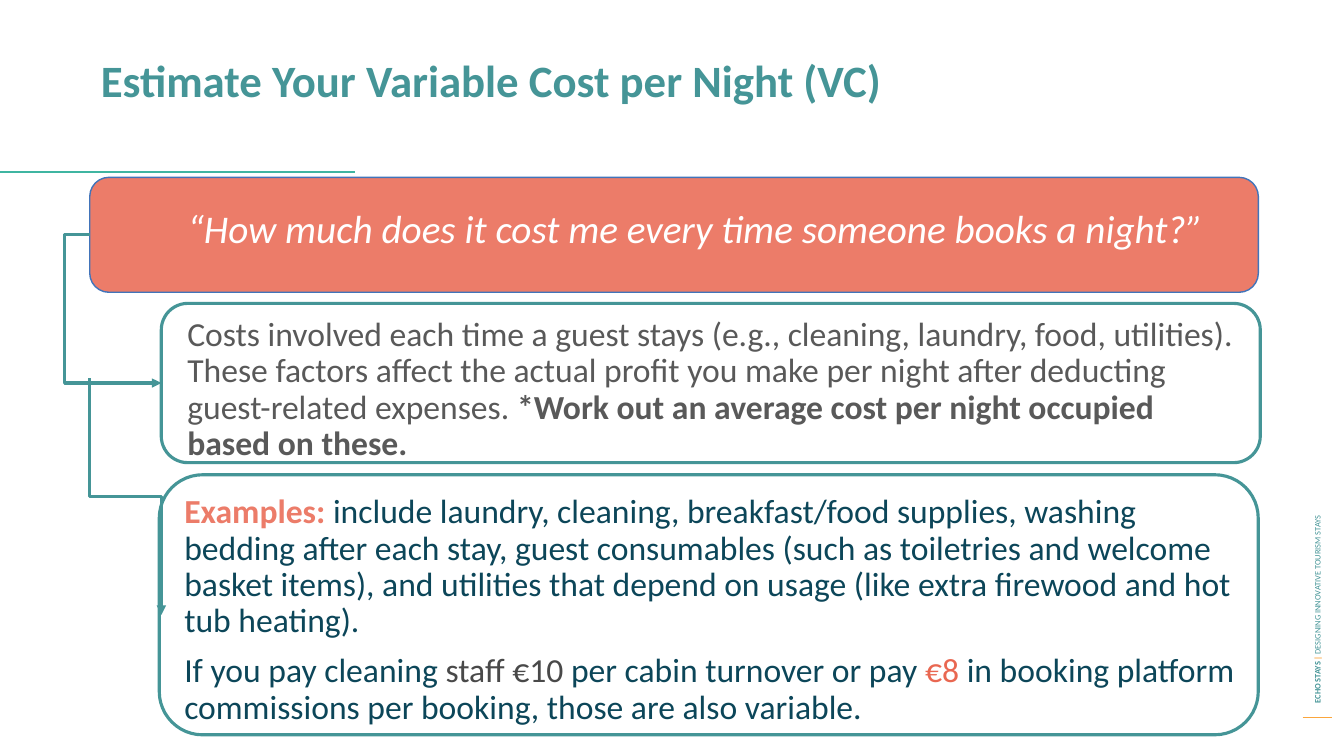
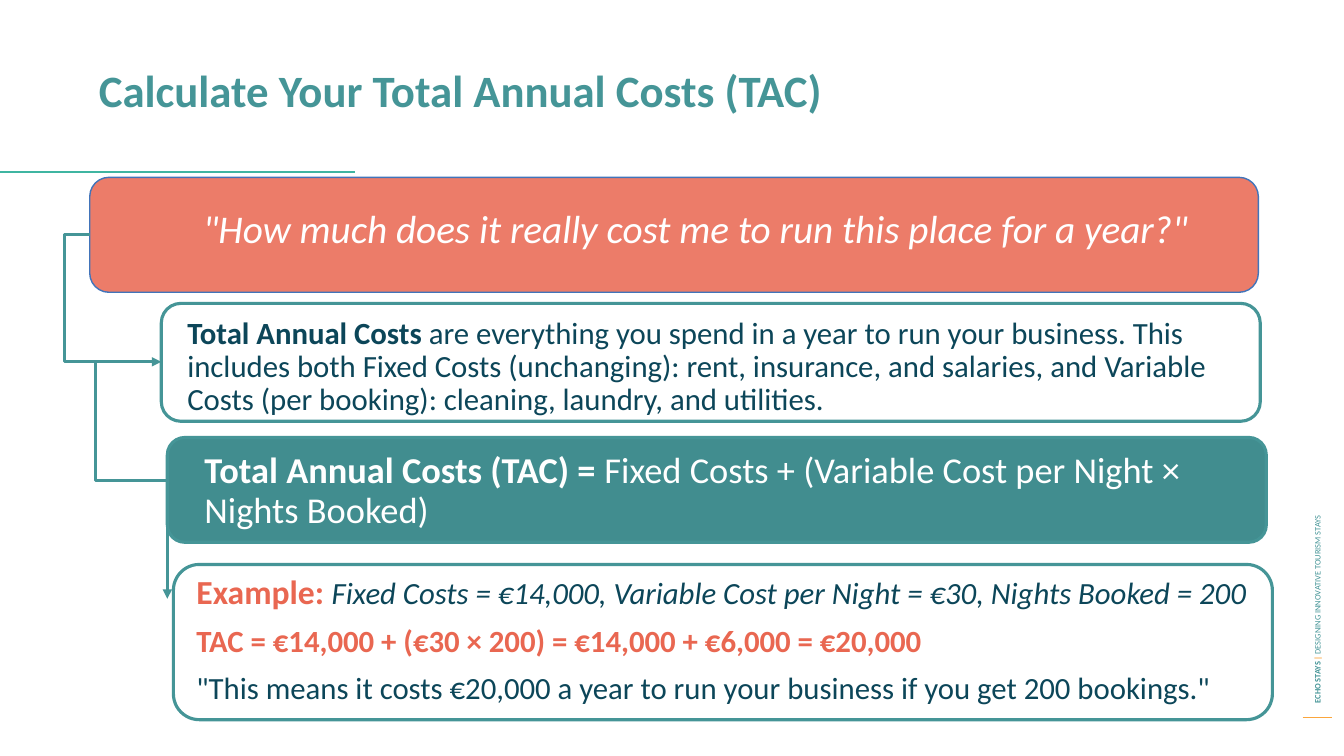
import dataclasses

import lxml.etree
import pptx
import pptx.dml.color
import pptx.enum.shapes
import pptx.enum.text
import pptx.oxml.ns
import pptx.util

Inches = pptx.util.Inches
Pt = pptx.util.Pt
SHAPES = pptx.enum.shapes.MSO_SHAPE
CONNECTORS = pptx.enum.shapes.MSO_CONNECTOR
ALIGN = pptx.enum.text.PP_ALIGN
ANCHOR = pptx.enum.text.MSO_ANCHOR
qn = pptx.oxml.ns.qn


# Shared colours, type sizes and measures
@dataclasses.dataclass(frozen=True)
class Theme:
    font: str = "Calibri"
    teal: str = "459597"
    deep_teal: str = "418D8F"
    rule_green: str = "3FB5A1"
    coral: str = "EC7C69"
    red: str = "E96751"
    amber: str = "FBA63D"
    blue: str = "4174BA"
    navy: str = "0C4659"
    grey: str = "595959"
    dark_grey: str = "494949"
    white: str = "FFFFFF"
    title_size: int = 32
    quote_size: int = 28
    formula_size: int = 26
    body_size: int = 24
    small_body_size: int = 22
    footer_size: int = 6
    card_line: float = 2.25
    card_width: float = 10.9
    text_width: float = 10.63
    text_height: float = 0.88
    wide_text: float = 11.61


THEME = Theme()


def rgb(colour):
    return pptx.dml.color.RGBColor.from_string(colour)


# Text
def format_span(span, formats):
    values = {"name": THEME.font, "bold": False, "italic": False, **formats}
    span.font.color.rgb = rgb(values.pop("colour"))
    values["size"] = Pt(values["size"])
    for name, value in values.items():
        setattr(span.font, name, value)


def write_paras(frame, paras, **para_formats):
    """Fill a frame; each paragraph is a list of (text, formats) spans."""
    for number, spans in enumerate(paras):
        para = frame.add_paragraph() if number else frame.paragraphs[0]
        values = {"line_spacing": 0.9, "space_before": Pt(10 if number else 0),
                  "alignment": ALIGN.LEFT, **para_formats}
        for name, value in values.items():
            setattr(para, name, value)
        for text, formats in spans:
            span = para.add_run()
            span.text = text
            format_span(span, formats)


def add_text(page, left, top, paras, width=THEME.text_width,
             height=THEME.text_height, **para_formats):
    box = page.shapes.add_textbox(*map(Inches, (left, top, width, height)))
    box.text_frame.word_wrap = True
    write_paras(box.text_frame, paras, **para_formats)
    return box


def add_title(page, left, top, text):
    title = page.shapes.title
    places = {"left": left, "top": top, "width": THEME.wide_text,
              "height": THEME.text_height}
    for name, value in places.items():
        setattr(title, name, Inches(value))
    frame_formats = {"vertical_anchor": ANCHOR.TOP, "word_wrap": True,
                     "auto_size": pptx.enum.text.MSO_AUTO_SIZE.NONE}
    for name, value in frame_formats.items():
        setattr(title.text_frame, name, value)
    style = {"size": THEME.title_size, "colour": THEME.teal, "bold": True}
    write_paras(title.text_frame, [[(text, style)]])


# Cards and lines
def add_card(page, left, top, height, width=THEME.card_width, fill=None,
             line=THEME.teal, weight=THEME.card_line):
    card = page.shapes.add_shape(SHAPES.FLOWCHART_ALTERNATE_PROCESS,
                                 *map(Inches, (left, top, width, height)))
    card.shadow.inherit = False
    if fill:
        card.fill.solid()
        card.fill.fore_color.rgb = rgb(fill)
    else:
        card.fill.background()
    card.line.color.rgb = rgb(line)
    card.line.width = Pt(weight)


def add_line(page, start, end, colour, weight, kind=CONNECTORS.STRAIGHT):
    line = page.shapes.add_connector(kind, *map(Inches, (*start, *end)))
    line.line.color.rgb = rgb(colour)
    line.line.width = Pt(weight)
    lxml.etree.SubElement(line._element.spPr, qn("a:effectLst"))
    return line


def add_elbow(page, start, end, bend):
    """Draw a bent arrow; bend is the share of its length before the turn."""
    arrow = add_line(page, start, end, THEME.teal, THEME.card_line,
                     CONNECTORS.ELBOW)
    properties = arrow._element.spPr
    lxml.etree.SubElement(properties.find(qn("a:ln")), qn("a:tailEnd"),
                          type="triangle")
    lxml.etree.SubElement(properties.find(".//" + qn("a:avLst")), qn("a:gd"),
                          name="adj1", fmla=f"val {round(bend * 100000)}")
    return arrow


def add_side_elbow(page, start, end):
    """Leave to the left, go down, then point right."""
    add_elbow(page, start, end, -0.25 / (end[0] - start[0]))


def add_step_elbow(page, start, end):
    """Go down, across and down: a mirrored elbow turned by a quarter."""
    middle_x, middle_y = (start[0] + end[0]) / 2, (start[1] + end[1]) / 2
    half_drop, half_run = (end[1] - start[1]) / 2, (end[0] - start[0]) / 2
    arrow = add_elbow(page, (middle_x + half_drop, middle_y - half_run),
                      (middle_x - half_drop, middle_y + half_run), 0.5)
    arrow._element.spPr.find(qn("a:xfrm")).set("rot", str(270 * 60000))


# Parts that every slide shares
def add_footer(page):
    add_line(page, (12.92, 7.12), (13.21, 7.12), THEME.amber, 0.75)
    style = {"size": THEME.footer_size, "colour": THEME.teal}
    box = add_text(page, 10.18, 4.09, [[
        ("ECHO STAYS ", {**style, "bold": True}),
        ("| ", {**style, "colour": THEME.amber, "bold": True}),
        ("DESIGNING INNOVATIVE TOURISM STAYS", style),
    ]], 5.77, 0.2, line_spacing=1.0)
    box.text_frame.vertical_anchor = ANCHOR.MIDDLE
    box.rotation = 270


def add_quote(page, quote):
    add_card(page, 0.89, 1.76, 1.14, 11.59, THEME.coral, THEME.blue, 1)
    add_line(page, (0, 1.71), (3.52, 1.71), THEME.rule_green, 1.5)
    style = {"size": THEME.quote_size, "colour": THEME.white, "italic": True}
    add_text(page, 1.09, 2.03, [[(quote, style)]], THEME.wide_text,
             alignment=ALIGN.CENTER)


def add_page(deck, title, title_left, title_top, quote):
    page = deck.slides.add_slide(deck.slide_layouts.get_by_name("Title Only"))
    add_footer(page)
    add_title(page, title_left, title_top, title)
    add_quote(page, quote)
    return page


# Slides
def build_variable_cost(deck):
    page = add_page(
        deck, "Estimate Your Variable Cost per Night (VC)", 0.9, 0.53,
        "“How much does it cost me every time someone books a night?”")
    grey = {"size": THEME.body_size, "colour": THEME.grey}
    navy = {**grey, "colour": THEME.navy}

    add_text(page, 1.76, 3.1, [[
        ("Costs involved each time a guest stays (e.g., cleaning, laundry, "
         "food, utilities). These factors affect the actual profit you make "
         "per night after deducting guest-related expenses. ", grey),
        ("*Work out an average cost per night occupied based on these.",
         {**grey, "bold": True}),
    ]])
    add_card(page, 1.6, 3.01, 1.58)

    add_text(page, 1.73, 4.86, [
        [("Examples: ", {**navy, "colour": THEME.coral, "bold": True}),
         ("include laundry, cleaning, breakfast/food supplies, washing "
          "bedding after each stay, guest consumables (such as toiletries "
          "and welcome basket items), and utilities that depend on usage "
          "(like extra firewood and hot tub heating).", navy)],
        [("If you pay cleaning ", navy),
         ("staff €10 ", {**navy, "colour": THEME.dark_grey}),
         ("per cabin turnover or pay", navy),
         (" €8 ", {**navy, "colour": THEME.red}),
         ("in booking platform commissions per booking, those are also "
          "variable.", navy)],
    ])
    add_card(page, 1.58, 4.71, 2.58)

    add_side_elbow(page, (0.89, 2.33), (1.6, 3.8))
    add_step_elbow(page, (0.89, 3.75), (1.6, 6.1))


def build_total_costs(deck):
    page = add_page(
        deck, "Calculate Your Total Annual Costs (TAC)", 0.88, 0.63,
        "\"How much does it really cost me to run this place for a year?\"")
    navy = {"size": THEME.small_body_size, "colour": THEME.navy}
    red = {**navy, "colour": THEME.red, "bold": True}
    white = {"size": THEME.formula_size, "colour": THEME.white}

    add_text(page, 1.76, 3.1, [[
        ("Total Annual Costs ", {**navy, "bold": True}),
        ("are everything you spend in a year to run your business. This "
         "includes both Fixed Costs (unchanging): rent, insurance, and "
         "salaries, and Variable Costs (per booking): cleaning, laundry, "
         "and utilities.", navy),
    ]])
    add_card(page, 1.6, 3.01, 1.17)

    add_card(page, 1.66, 4.34, 1.04, fill=THEME.deep_teal)
    add_text(page, 1.93, 4.44, [[
        ("Total Annual Costs (TAC) = ", {**white, "bold": True}),
        ("Fixed Costs + (Variable Cost per Night × Nights Booked)", white),
    ]])

    add_text(page, 1.85, 5.66, [
        [("Example: ", {**red, "size": THEME.body_size}),
         ("Fixed Costs = €14,000, Variable Cost per Night = €30, "
          "Nights Booked = 200", {**navy, "italic": True})],
        [("TAC = €14,000 + (€30 × 200) = €14,000 + €6,000 = €20,000", red)],
        [("\"This means it costs €20,000 a year to run your business if you "
          "get 200 bookings.\"", navy)],
    ])
    add_card(page, 1.72, 5.6, 1.54)

    add_side_elbow(page, (0.89, 2.33), (1.6, 3.59))
    add_step_elbow(page, (0.95, 3.59), (1.66, 5.94))


def main():
    deck = pptx.Presentation()
    deck.slide_width = Inches(13.33)
    deck.slide_height = Inches(7.5)
    build_variable_cost(deck)
    build_total_costs(deck)
    deck.save("out.pptx")


if __name__ == "__main__":
    main()
